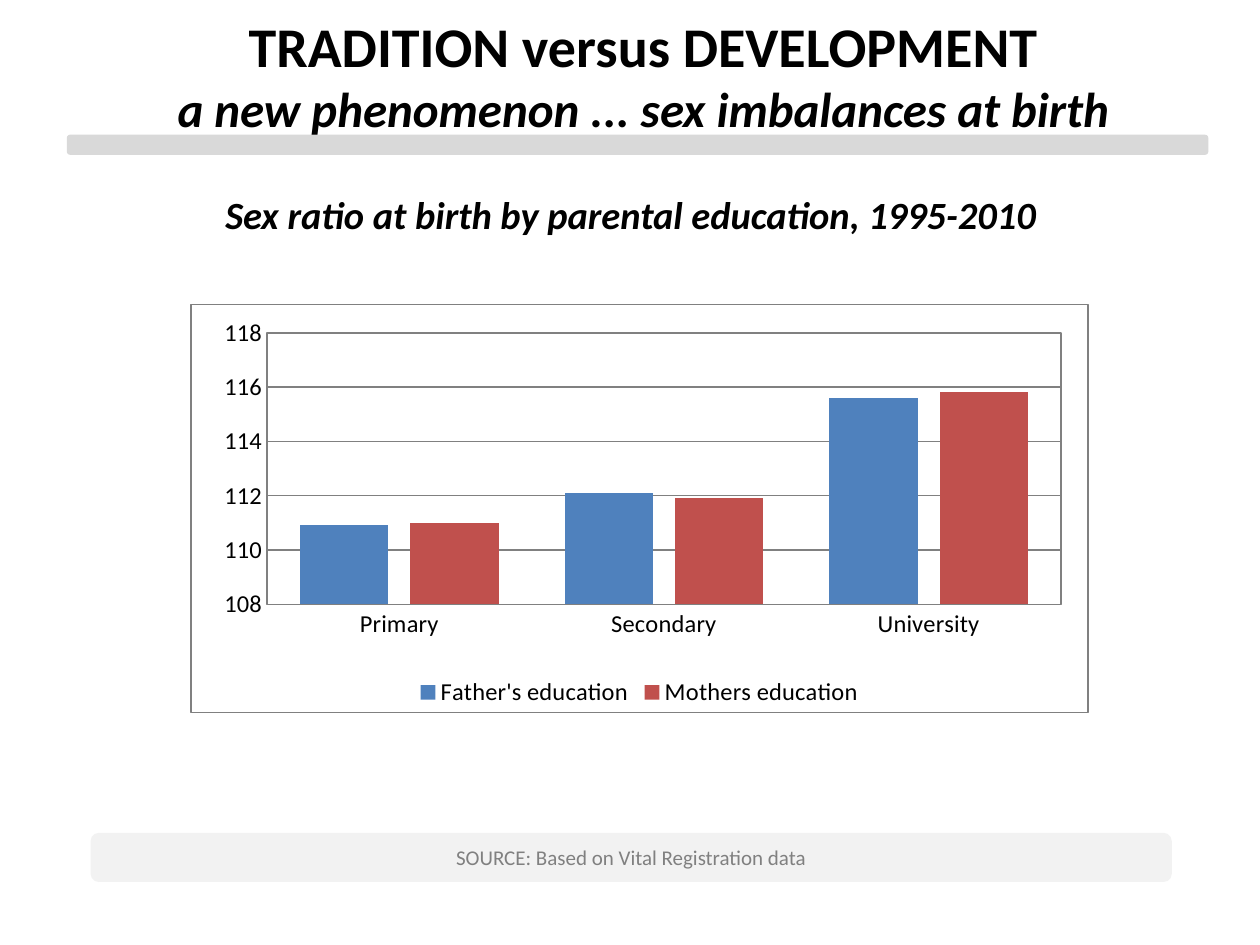
from lxml import etree
from pptx import Presentation
from pptx import util as u
from pptx.chart.data import CategoryChartData
from pptx.dml.color import RGBColor
from pptx.enum import chart as charts, shapes, text
from pptx.oxml import parse_xml

COLORS = {
    "text": "000000", "rule": "D9D9D9", "source_fill": "F2F2F2", "gray": "808080",
    "father": "4F81BD", "mother": "C0504D",
}
FONT = "Calibri"

TITLE = [
    ("TRADITION versus DEVELOPMENT", 32, True, False),
    ("a new phenomenon ... sex imbalances at birth", 28, True, True),
]
CHART_TITLE = [("Sex ratio at birth by parental education, 1995-2010", 22, True, True)]
SOURCE = [("SOURCE: Based on Vital Registration data", 12, False, False)]

CATEGORIES = ["Primary", "Secondary", "University"]
SERIES = [
    ("Father's education", [110.9, 112.1, 115.6], "father"),
    ("Mothers education", [111.0, 111.9, 115.8], "mother"),
]
PLOT_LAYOUT = {"x": 0.085, "y": 0.07, "w": 0.885, "h": 0.665}

BOXES = {
    "rule": (38.2, 77, 652.3, 11.5),
    "title": (63.4, 2.9, 608.4, 79.9),
    "source": (51.8, 475.9, 617.8, 28.1),
    "chart_title": (121.7, 105.8, 483.1, 33.8),
    "chart": (108.7, 173.5, 513.4, 234),
}

CHART_NS = "http://schemas.openxmlformats.org/drawingml/2006/chart"
DRAWING_NS = "http://schemas.openxmlformats.org/drawingml/2006/main"


def box(name):
    return [u.Pt(value) for value in BOXES[name]]


def rgb(name):
    return RGBColor.from_string(COLORS[name])


def write(frame, lines, color, alignment):
    for index, (line, size, bold, italic) in enumerate(lines):
        paragraph = frame.paragraphs[0] if index == 0 else frame.add_paragraph()
        paragraph.text = line
        paragraph.alignment = alignment
        font = paragraph.font
        font.name, font.size = FONT, u.Pt(size)
        font.bold, font.italic = bold, italic
        font.color.rgb = rgb(color)


def add_bar(slide, name, fill):
    shape = slide.shapes.add_shape(shapes.MSO_SHAPE.ROUNDED_RECTANGLE, *box(name))
    shape.shadow.inherit = False
    shape.fill.solid()
    shape.fill.fore_color.rgb = rgb(fill)
    shape.line.fill.background()
    return shape


def add_text(slide, name, lines, wrap, alignment):
    frame = slide.shapes.add_textbox(*box(name)).text_frame
    frame.word_wrap = wrap
    frame.auto_size = text.MSO_AUTO_SIZE.SHAPE_TO_FIT_TEXT
    write(frame, lines, "text", alignment)


def outline():
    return parse_xml(
        f'<c:spPr xmlns:c="{CHART_NS}" xmlns:a="{DRAWING_NS}"><a:noFill/><a:ln w="9525">'
        f'<a:solidFill><a:srgbClr val="{COLORS["gray"]}"/></a:solidFill></a:ln></c:spPr>'
    )


def frame_chart(chart):
    chart_element = chart.element.find(f"{{{CHART_NS}}}chart")
    plot_area = chart_element.find(f"{{{CHART_NS}}}plotArea")
    for layout in plot_area.findall(f"{{{CHART_NS}}}layout"):
        plot_area.remove(layout)
    layout = etree.Element(f"{{{CHART_NS}}}layout")
    manual = etree.SubElement(layout, f"{{{CHART_NS}}}manualLayout")
    settings = {"layoutTarget": "inner", "xMode": "edge", "yMode": "edge", **PLOT_LAYOUT}
    for tag, value in settings.items():
        etree.SubElement(manual, f"{{{CHART_NS}}}{tag}", val=str(value))
    plot_area.insert(0, layout)
    plot_area.append(outline())
    chart_element.addnext(outline())


def add_education_chart(slide):
    data = CategoryChartData(number_format="0")
    data.categories = CATEGORIES
    for name, values, color in SERIES:
        data.add_series(name, values)
    chart = slide.shapes.add_chart(
        charts.XL_CHART_TYPE.COLUMN_CLUSTERED, *box("chart"), data
    ).chart
    chart.has_title = False
    chart.font.name, chart.font.size = FONT, u.Pt(14)
    chart.font.color.rgb = rgb("text")
    chart.has_legend = True
    chart.legend.position = charts.XL_LEGEND_POSITION.BOTTOM
    chart.legend.include_in_layout = False

    plot = chart.plots[0]
    plot.gap_width, plot.overlap, plot.vary_by_categories = 75, -25, False
    for series, (name, values, color) in zip(plot.series, SERIES):
        series.format.fill.solid()
        series.format.fill.fore_color.rgb = rgb(color)

    category_axis, value_axis = chart.category_axis, chart.value_axis
    for axis in (category_axis, value_axis):
        axis.major_tick_mark = axis.minor_tick_mark = charts.XL_TICK_MARK.NONE
    value_axis.minimum_scale, value_axis.maximum_scale, value_axis.major_unit = 108, 118, 2
    value_axis.tick_labels.number_format = "0"
    value_axis.tick_labels.number_format_is_linked = False
    value_axis.format.line.fill.background()
    value_axis.has_major_gridlines = True
    for line in (category_axis.format.line, value_axis.major_gridlines.format.line):
        line.color.rgb = rgb("gray")
        line.width = u.Pt(0.75)
    frame_chart(chart)


def main():
    presentation = Presentation()
    presentation.slide_width, presentation.slide_height = u.Pt(720), u.Pt(540)
    slide = presentation.slides.add_slide(presentation.slide_layouts[6])
    add_bar(slide, "rule", "rule")
    add_text(slide, "title", TITLE, True, text.PP_ALIGN.CENTER)
    source = add_bar(slide, "source", "source_fill").text_frame
    source.vertical_anchor = text.MSO_ANCHOR.MIDDLE
    write(source, SOURCE, "gray", text.PP_ALIGN.CENTER)
    add_text(slide, "chart_title", CHART_TITLE, False, text.PP_ALIGN.LEFT)
    add_education_chart(slide)
    presentation.save("out.pptx")


if __name__ == "__main__":
    main()
